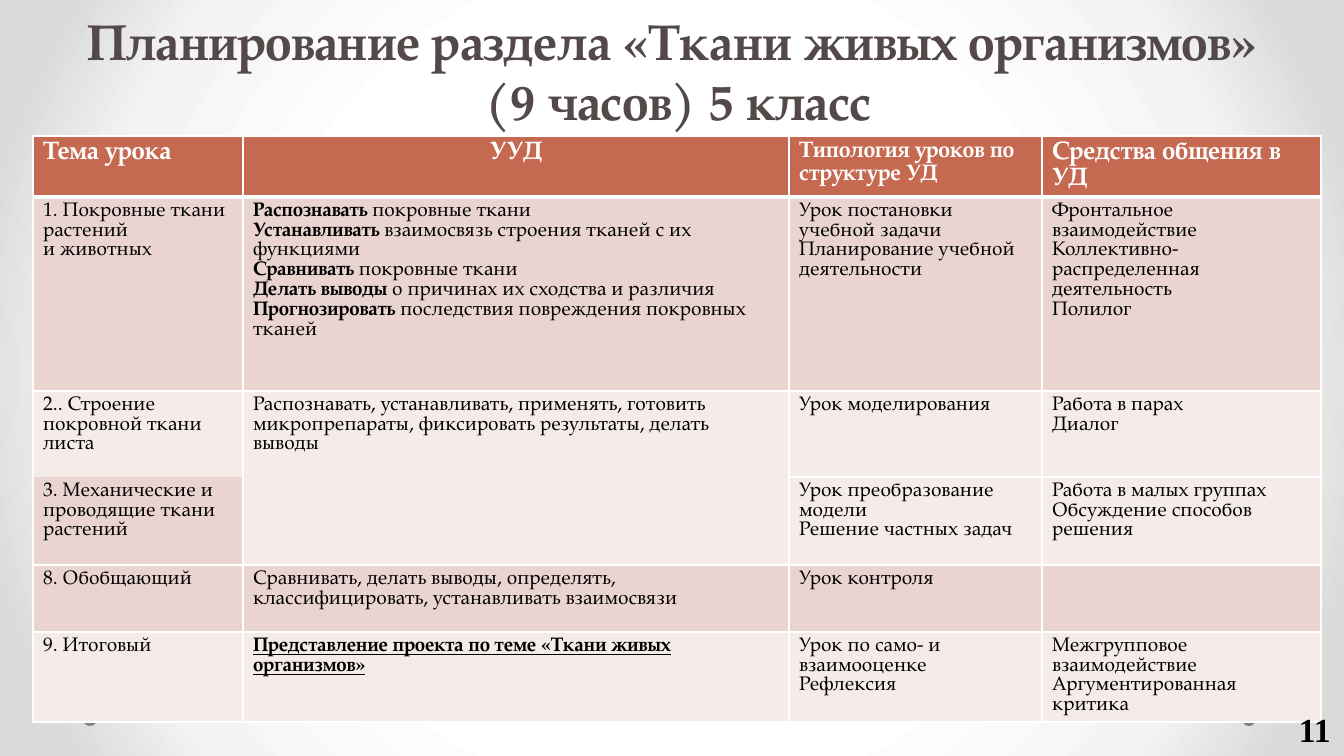
import pptx
import pptx.dml.color
import pptx.enum.shapes
import pptx.enum.text
import pptx.oxml
import pptx.oxml.ns
import pptx.util
from lxml import etree

EMU_PER_PX = 914400 / 100.8
ALIGN = pptx.enum.text.PP_ALIGN
TITLE_LINES = ["Планирование раздела «Ткани живых организмов» ", "(9 часов) 5 класс"]
COLUMN_WIDTHS = [210, 546, 253, 279]
ROW_HEIGHTS = [58, 194, 86, 0, 88, 67, 90]
HEADINGS = [("Тема урока", 18), ("УУД", 18),
            ("Типология уроков по структуре УД", 16), ("Средства общения в УД", 18)]
DARK, LIGHT = "EAD4D0", "F5EBE9"

# A paragraph is a string or a list of (text, style) runs: b is bold, u is underlined.
SKILLS = [
    [("Распознавать ", "b"), ("покровные ткани", "")],
    [("Устанавливать", "b"), (" взаимосвязь строения тканей с их функциями", "")],
    [("Сравнивать", "b"), (" покровные ткани", "")],
    [("Делать выводы ", "b"), ("о причинах их сходства и различия", "")],
    [("Прогнозировать", "b"), (" последствия повреждения покровных тканей", "")],
]
LESSONS = [
    [["1. Покровные ткани растений", "и животных"], SKILLS,
     ["Урок постановки учебной задачи", "Планирование учебной деятельности"],
     ["Фронтальное взаимодействие", "Коллективно-распределенная деятельность", "Полилог"]],
    [["2.. Строение покровной ткани листа"],
     ["Распознавать, устанавливать, применять, готовить микропрепараты, "
      "фиксировать результаты, делать выводы"],
     ["Урок моделирования"], ["Работа в парах", "Диалог"]],
    [["3. Механические и проводящие ткани растений"], [], [], []],
    [[], [], ["Урок преобразование модели", "Решение частных задач"],
     ["Работа в малых группах", "Обсуждение способов решения"]],
    [["8. Обобщающий"],
     ["Сравнивать, делать выводы, определять, классифицировать, устанавливать взаимосвязи"],
     ["Урок контроля"], []],
    [["9. Итоговый"], [[("Представление проекта по теме «Ткани живых организмов»", "bu")]],
     ["Урок по само- и взаимооценке", "Рефлексия"],
     ["Межгрупповое взаимодействие", "Аргументированная критика"]],
]
LESSON_FILLS = [DARK, LIGHT, LIGHT, LIGHT, DARK, LIGHT]
MERGES = [((2, 1), (4, 1)), ((2, 2), (3, 2)), ((2, 3), (3, 3)), ((3, 0), (4, 0))]


def px(length):
    return pptx.util.Emu(round(length * EMU_PER_PX))


def color(hex_code):
    return pptx.dml.color.RGBColor.from_string(hex_code)


class PlanSlide:
    font = "TeX Gyre Pagella"
    border = "FFFFFF"

    def __init__(self, presentation):
        self.slide = presentation.slides.add_slide(presentation.slide_layouts[5])

    def radial_background(self, stops):
        self.slide.background.fill.gradient()
        gradient = self.slide.element.find(".//" + pptx.oxml.ns.qn("a:gradFill"))
        stop_xml = "".join(f'<a:gs pos="{percent * 1000}"><a:srgbClr val="{shade}"/></a:gs>'
                           for percent, shade in stops)
        radial = pptx.oxml.parse_xml(
            f'<a:gradFill {pptx.oxml.ns.nsdecls("a")} rotWithShape="1"><a:gsLst>{stop_xml}</a:gsLst>'
            '<a:path path="circle"><a:fillToRect l="50000" t="50000" r="50000" b="50000"/></a:path>'
            '</a:gradFill>')
        gradient.getparent().replace(gradient, radial)

    def add_run(self, paragraph, text, size, shade, style="", font=None):
        run = paragraph.add_run()
        run.text = text
        run.font.name = font or self.font
        run.font.size = pptx.util.Pt(size)
        run.font.bold = "b" in style
        run.font.underline = "u" in style
        run.font.color.rgb = color(shade)

    def title(self, lines, box):
        title = self.slide.shapes.title
        title.left, title.top, title.width, title.height = map(px, box)
        frame = title.text_frame
        frame.word_wrap = True
        frame.auto_size = pptx.enum.text.MSO_AUTO_SIZE.NONE
        frame.vertical_anchor = pptx.enum.text.MSO_ANCHOR.BOTTOM
        paragraph = frame.paragraphs[0]
        paragraph.alignment = ALIGN.CENTER
        paragraph.line_spacing = pptx.util.Pt(43)
        for index, line in enumerate(lines):
            if index:
                paragraph.add_line_break()
            self.add_run(paragraph, line, 36, "534949", "b")

    def dot(self, left, top):
        dot = self.slide.shapes.add_shape(
            pptx.enum.shapes.MSO_SHAPE.OVAL, px(left), px(top), px(12), px(9))
        dot.shadow.inherit = False
        dot.fill.solid()
        dot.fill.fore_color.rgb = color("808080")
        dot.line.fill.background()

    def table(self, left, top, widths, heights):
        table = self.slide.shapes.add_table(
            len(heights), len(widths), px(left), px(top), px(sum(widths)), px(sum(heights))).table
        for column, width in zip(table.columns, widths):
            column.width = px(width)
        for row, height in zip(table.rows, heights):
            row.height = px(height)
        return table

    def cell(self, cell, paragraphs, fill, size=14, shade="000000", align=None, thick=None):
        """Fill one cell; thick names the side (T or B) with the heavy border."""
        properties = cell._tc.get_or_add_tcPr()
        for side in "LRTB":
            width = pptx.util.Pt(3 if side == thick else 1)
            line = etree.SubElement(properties, pptx.oxml.ns.qn(f"a:ln{side}"), w=str(width))
            solid = etree.SubElement(line, pptx.oxml.ns.qn("a:solidFill"))
            etree.SubElement(solid, pptx.oxml.ns.qn("a:srgbClr"), val=self.border)
        cell.fill.solid()
        cell.fill.fore_color.rgb = color(fill)
        frame = cell.text_frame
        for index, content in enumerate(paragraphs):
            paragraph = frame.add_paragraph() if index else frame.paragraphs[0]
            paragraph.alignment = align
            paragraph.line_spacing = pptx.util.Pt(size * 1.01)
            runs = [(content, "")] if isinstance(content, str) else content
            for text, style in runs:
                self.add_run(paragraph, text, size, shade, style)

    def page_number(self, number, box):
        frame = self.slide.shapes.add_textbox(*map(px, box)).text_frame
        frame.word_wrap = False
        frame.auto_size = pptx.enum.text.MSO_AUTO_SIZE.SHAPE_TO_FIT_TEXT
        self.add_run(frame.paragraphs[0], number, 24, "000000", "b", "Times New Roman")


def main():
    presentation = pptx.Presentation()
    presentation.slide_width = px(1344)
    presentation.slide_height = px(756)
    plan = PlanSlide(presentation)
    plan.radial_background([(50, "FFFFFF"), (76, "F4F4F4"), (92, "DADADA")])
    plan.title(TITLE_LINES, (-70, -40, 1497, 176))
    for left in (84, 1243):
        plan.dot(left, 717)

    lessons = plan.table(33, 136, COLUMN_WIDTHS, ROW_HEIGHTS)
    for column, (heading, size) in enumerate(HEADINGS):
        plan.cell(lessons.cell(0, column), [[(heading, "b")]], "C66951", size, "FFFFFF",
                  ALIGN.CENTER if column == 1 else None, "B")
    for row, (lesson, row_fill) in enumerate(zip(LESSONS, LESSON_FILLS), start=1):
        for column, paragraphs in enumerate(lesson):
            fill = DARK if column == 0 and row in (3, 4) else row_fill
            plan.cell(lessons.cell(row, column), paragraphs, fill, thick="T" if row == 1 else None)
    for first, last in MERGES:
        lessons.cell(*first).merge(lessons.cell(*last))

    plan.page_number("11", (1289, 704, 52, 50))
    presentation.save("out.pptx")


if __name__ == "__main__":
    main()
